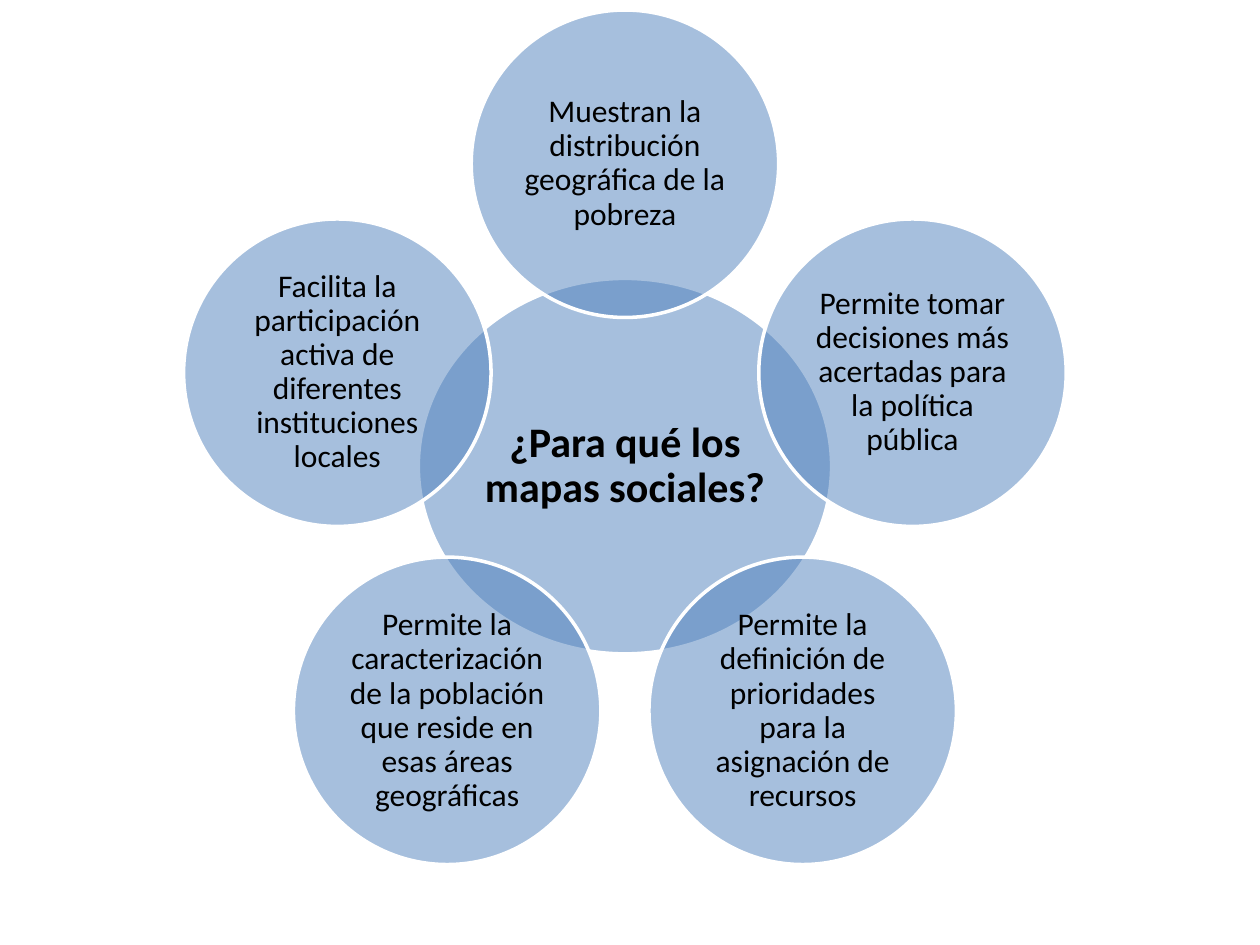
import math

import pptx
import pptx.dml.color
import pptx.enum.shapes
import pptx.enum.text
import pptx.oxml
import pptx.oxml.ns
import pptx.util
from pptx.util import Inches, Pt

HUB = "¿Para qué los mapas sociales?"
USES = [
    "Muestran la distribución geográfica de la pobreza",
    "Permite tomar decisiones más acertadas para la política pública",
    "Permite la definición de prioridades para la asignación de recursos",
    "Permite la caracterización de la población que reside en esas áreas geográficas",
    "Facilita la participación activa de diferentes instituciones locales",
]
MID_X, MID_Y = 4.96, 3.7
ORBIT = 2.4
SIZE = 2.44


def paint(color, code):
    """Set a colour from a hex string."""
    color.rgb = pptx.dml.color.RGBColor.from_string(code)


def fade(shape, share):
    """Make a solid fill see-through, keeping the given percentage."""
    tint = shape.fill._xPr.find(".//" + pptx.oxml.ns.qn("a:srgbClr"))
    alpha = pptx.oxml.parse_xml(
        f'<a:alpha {pptx.oxml.ns.nsdecls("a")} val="{share * 1000}"/>'
    )
    tint.append(alpha)


def write(shape, text, size, bold):
    """Put centred text inside a shape."""
    frame = shape.text_frame
    frame.text = text
    frame.word_wrap = True
    frame.vertical_anchor = pptx.enum.text.MSO_ANCHOR.MIDDLE
    frame.margin_left = frame.margin_right = Inches(0.03)
    frame.margin_top = frame.margin_bottom = Inches(0.03)
    para = frame.paragraphs[0]
    para.alignment = pptx.enum.text.PP_ALIGN.CENTER
    para.line_spacing = 0.9
    font = para.runs[0].font
    font.name = "Calibri"
    font.size = Pt(size)
    font.bold = bold
    paint(font.color, "000000")


def add_disc(slide, x, y, wide, high, text, size=18, bold=False):
    """Add a translucent ellipse centred on a point."""
    disc = slide.shapes.add_shape(
        pptx.enum.shapes.MSO_SHAPE.OVAL,
        Inches(x - wide / 2), Inches(y - high / 2), Inches(wide), Inches(high),
    )
    disc.shadow.inherit = False
    disc.fill.solid()
    paint(disc.fill.fore_color, "4F81BD")
    fade(disc, 50)
    paint(disc.line.color, "FFFFFF")
    disc.line.width = Pt(2)
    write(disc, text, size, bold)


def main():
    """Build the radial diagram and save it."""
    deck = pptx.Presentation()
    deck.slide_width, deck.slide_height = Inches(10), Inches(7.5)
    slide = deck.slides.add_slide(deck.slide_layouts[6])
    add_disc(slide, MID_X, MID_Y, 3.28, 2.98, HUB, 24, True)
    for i, text in enumerate(USES):
        angle = math.tau * i / len(USES)
        x = MID_X + ORBIT * math.sin(angle)
        y = MID_Y - ORBIT * math.cos(angle)
        add_disc(slide, x, y, SIZE, SIZE, text)
    deck.save("out.pptx")


if __name__ == "__main__":
    main()
